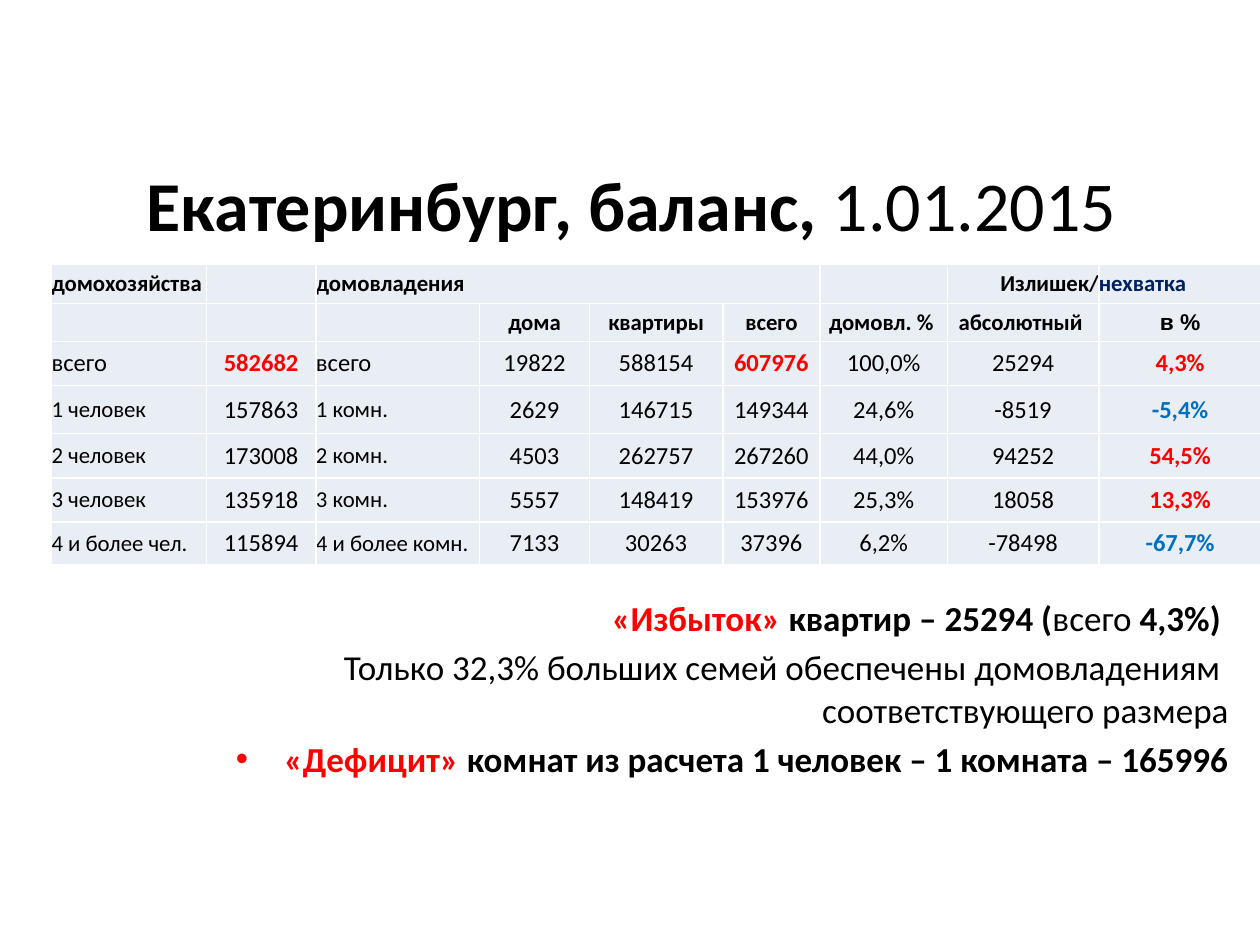
from lxml import etree
from pptx import Presentation
from pptx.dml.color import RGBColor
from pptx.enum.text import MSO_ANCHOR, PP_ALIGN
from pptx.oxml.ns import qn
from pptx.util import Cm, Pt

LEFT, CENTER, RIGHT = PP_ALIGN.LEFT, PP_ALIGN.CENTER, PP_ALIGN.RIGHT
MIDDLE, TOP = MSO_ANCHOR.MIDDLE, MSO_ANCHOR.TOP

BLACK = RGBColor(0x00, 0x00, 0x00)
RED = RGBColor(0xFF, 0x00, 0x00)
BLUE = RGBColor(0x00, 0x70, 0xC0)
NAVY = RGBColor(0x00, 0x20, 0x60)
CELL_FILL = RGBColor(0xE9, 0xED, 0xF4)
BORDER = "FFFFFF"

# Content: runs are (text, bold, colour)
TITLE = [("Екатеринбург, баланс, ", True, BLACK), ("1.01.2015", False, BLACK)]

HEADERS = [
    ["домохозяйства", "", "домовладения", "", "", "", "", "Излишек/", "нехватка"],
    ["", "", "", "дома", "квартиры", "всего", "домовл. % ", "абсолютный ", "в %"],
]
BALANCE = [
    ["всего", "582682", "всего", "19822", "588154", "607976", "100,0%", "25294", "4,3%"],
    ["1 человек", "157863", "1 комн.", "2629", "146715", "149344", "24,6%", "-8519", "-5,4%"],
    ["2 человек", "173008", "2 комн.", "4503", "262757", "267260", "44,0%", "94252", "54,5%"],
    ["3 человек", "135918", "3 комн.", "5557", "148419", "153976", "25,3%", "18058", "13,3%"],
    ["4 и более чел.", "115894", "4 и более комн.", "7133", "30263", "37396", "6,2%",
     "-78498", "-67,7%"],
]
COLUMN_WIDTHS = [3.12, 2.21, 3.3, 2.21, 2.69, 1.96, 2.57, 3.05, 3.28]
ROW_HEIGHTS = [0.79, 0.74, 0.89, 0.97, 0.89, 0.89, 0.86]
LABEL_COLUMNS = (0, 2)
TOTAL_COLUMNS = (1, 5)
PERCENT_COLUMN = 8

# Paragraphs of the conclusions: (bulleted, runs)
CONCLUSIONS = [
    (False, [("«Избыток» ", True, RED), ("квартир – 25294 (", True, BLACK),
             ("всего", False, BLACK), (" 4,3%) ", True, BLACK)]),
    (False, [("Только 32,3% больших семей обеспечены домовладениям \n"
              "соответствующего размера", False, BLACK)]),
    (True, [("«Дефицит» ", True, RED),
            ("комнат из расчета 1 человек – 1 комната – 165996", True, BLACK)]),
]


def add_runs(paragraph, runs, size, font_name="Calibri"):
    for text, bold, color in runs:
        for index, line in enumerate(text.split("\n")):
            if index:
                paragraph.add_line_break()
            run = paragraph.add_run()
            run.text = line
            run.font.name = font_name
            run.font.size = Pt(size)
            run.font.bold = bold
            run.font.color.rgb = color


def add_text_box(slide, left, top, width, height, anchor):
    box = slide.shapes.add_textbox(Cm(left), Cm(top), Cm(width), Cm(height))
    frame = box.text_frame
    frame.word_wrap = True
    frame.vertical_anchor = anchor
    return frame


def set_indent(paragraph, bulleted):
    properties = paragraph._p.get_or_add_pPr()
    properties.set("marL", str(Cm(0.97 if bulleted else 0.15)))
    properties.set("indent", str(Cm(-0.97 if bulleted else 0)))
    if bulleted:
        etree.SubElement(properties, qn("a:buFont")).set("typeface", "Arial")
        etree.SubElement(properties, qn("a:buChar")).set("char", "•")


def set_borders(cell):
    properties = cell._tc.get_or_add_tcPr()
    for index, side in enumerate(("lnL", "lnR", "lnT", "lnB")):
        line = etree.Element(qn(f"a:{side}"), w=str(Pt(1)))
        fill = etree.SubElement(line, qn("a:solidFill"))
        etree.SubElement(fill, qn("a:srgbClr")).set("val", BORDER)
        properties.insert(index, line)


def cell_style(row, column, text):
    """Return alignment, size, bold and colour by the cell's role."""
    is_label = column in LABEL_COLUMNS
    alignment = LEFT if is_label else CENTER
    if row == 0:
        alignment = RIGHT if text == "Излишек/" else LEFT
        return alignment, 13, True, NAVY if column == PERCENT_COLUMN else BLACK
    if row < len(HEADERS):
        return alignment, 13, True, BLACK
    is_total_row = row == len(HEADERS)
    size = 13 if is_label and not is_total_row else 14
    if column == PERCENT_COLUMN:
        return alignment, size, True, BLUE if text.startswith("-") else RED
    if is_total_row and column in TOTAL_COLUMNS:
        return alignment, size, True, RED
    return alignment, size, False, BLACK


def add_balance_table(slide):
    rows = HEADERS + BALANCE
    table = slide.shapes.add_table(
        len(rows), len(COLUMN_WIDTHS), Cm(1.04), Cm(5.33),
        Cm(sum(COLUMN_WIDTHS)), Cm(sum(ROW_HEIGHTS))).table
    table.first_row = table.horz_banding = False
    for column, width in zip(table.columns, COLUMN_WIDTHS):
        column.width = Cm(width)
    for row, height in zip(table.rows, ROW_HEIGHTS):
        row.height = Cm(height)
    table.cell(0, 2).merge(table.cell(0, 5))

    for row_index, texts in enumerate(rows):
        for column_index, text in enumerate(texts):
            cell = table.cell(row_index, column_index)
            cell.margin_left = cell.margin_right = 0
            cell.margin_top = cell.margin_bottom = 0
            cell.vertical_anchor = MIDDLE
            cell.fill.solid()
            cell.fill.fore_color.rgb = CELL_FILL
            set_borders(cell)
            if cell.is_spanned:
                continue
            alignment, size, bold, color = cell_style(row_index, column_index, text)
            paragraph = cell.text_frame.paragraphs[0]
            paragraph.alignment = alignment
            font_name = "Arial" if text == "в %" else "Calibri"
            add_runs(paragraph, [(text, bold, color)], size, font_name)


def main():
    presentation = Presentation()
    presentation.slide_width, presentation.slide_height = Cm(25.4), Cm(19.05)
    slide = presentation.slides.add_slide(presentation.slide_layouts[6])

    # Title
    title = add_text_box(slide, 1.3, 2.51, 22.86, 3.18, MIDDLE).paragraphs[0]
    title.alignment = CENTER
    add_runs(title, TITLE, 40)

    # Conclusions below the table
    frame = add_text_box(slide, 0.41, 11.91, 24.61, 3.99, TOP)
    for index, (bulleted, runs) in enumerate(CONCLUSIONS):
        paragraph = frame.add_paragraph() if index else frame.paragraphs[0]
        set_indent(paragraph, bulleted)
        paragraph.alignment = RIGHT
        paragraph.space_before = Pt(4 if index else 0)
        add_runs(paragraph, runs, 20)

    # Table of households and dwellings
    add_balance_table(slide)
    presentation.save("out.pptx")


if __name__ == "__main__":
    main()
